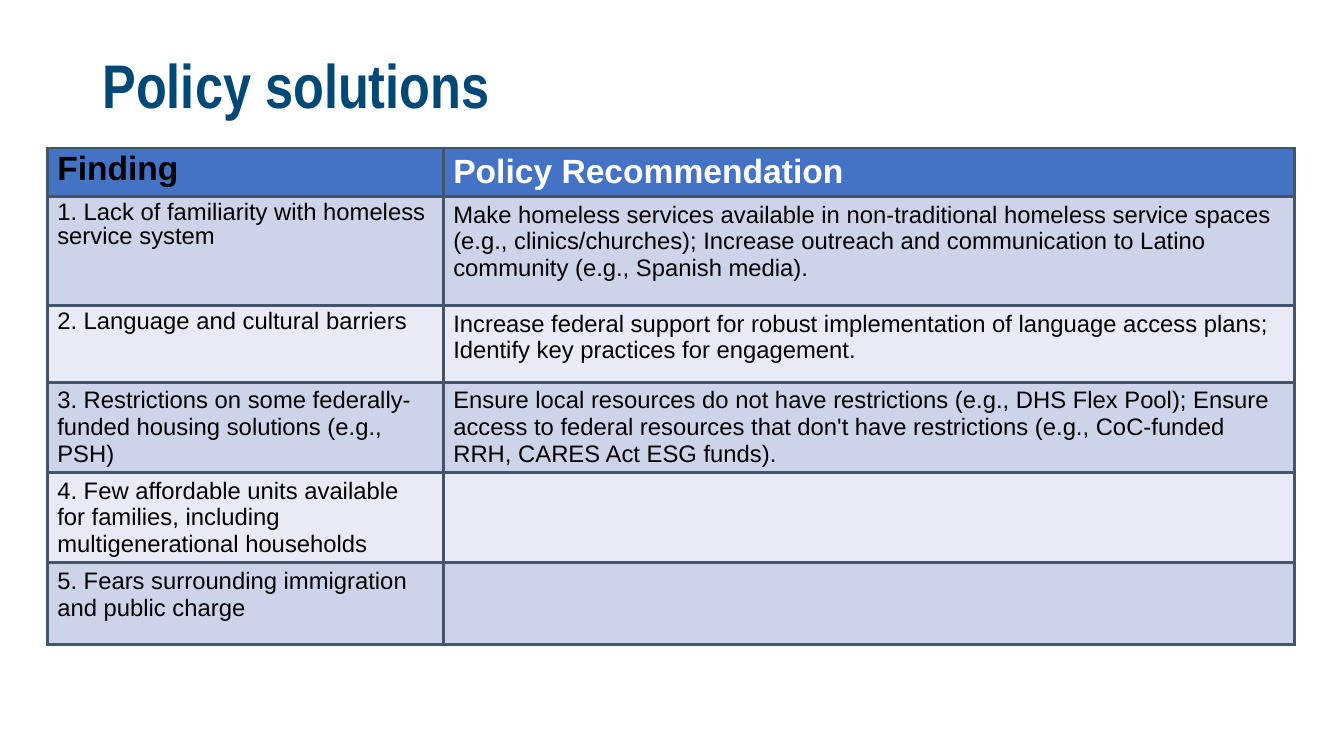
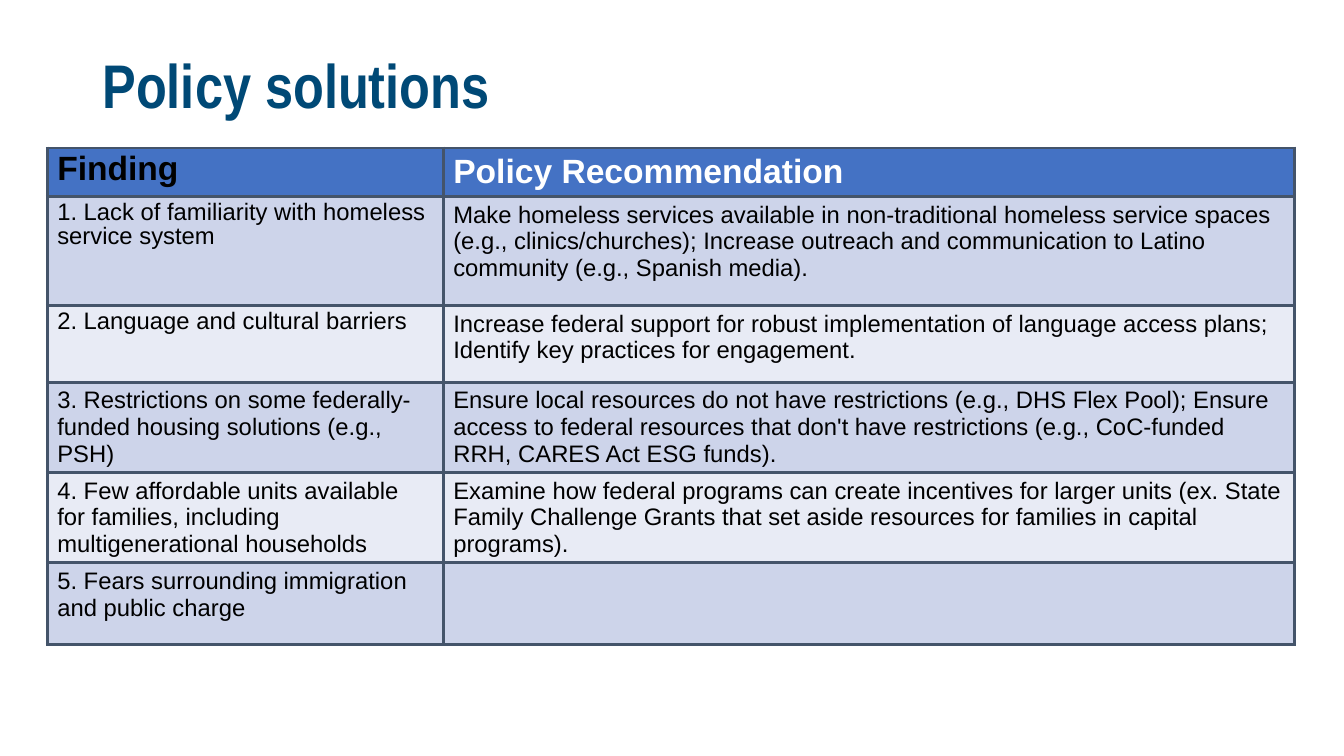
from lxml.etree import SubElement
from pptx import Presentation
from pptx.dml.color import RGBColor
from pptx.enum.text import MSO_ANCHOR, MSO_AUTO_SIZE, PP_ALIGN
from pptx.oxml.ns import qn
from pptx.util import Cm, Pt

# Content
TITLE = "Policy solutions"
HEADERS = ("Finding", "Policy Recommendation")
FINDINGS = [
    "1. Lack of familiarity with homeless service system",
    "2. Language and cultural barriers",
    "3. Restrictions on some federally-funded housing solutions (e.g., PSH)",
    "4. Few affordable units available for families, including multigenerational households",
    "5. Fears surrounding immigration and public charge",
]
RECOMMENDATIONS = [
    "Make homeless services available in non-traditional homeless service spaces "
    "(e.g., clinics/churches); Increase outreach and communication to Latino "
    "community (e.g., Spanish media).",
    "Increase federal support for robust implementation of language access "
    "plans; Identify key practices for engagement.",
    "Ensure local resources do not have restrictions (e.g., DHS Flex Pool); Ensure "
    "access to federal resources that don't have restrictions (e.g., CoC-funded "
    "RRH, CARES Act ESG funds).",
    "Examine how federal programs can create incentives for larger units (ex. State "
    "Family Challenge Grants that set aside resources for families in capital "
    "programs).",
]
RECOMMENDATIONS_SHOWN = (3, 4)  # one slide for each count

# Shared look
TITLE_COLOR, BLACK, WHITE = "004976", "000000", "FFFFFF"
HEADER_FILL, BAND_FILLS = "4472C4", ("CDD4EA", "E8EBF5")
BORDER_COLOR, BORDER_WIDTH = "44546A", Pt(2.25)
TITLE_FONT, TABLE_FONT = "Arial Narrow", "Arial"
TABLE_LEFT, TABLE_TOP = 1.19, 3.73
COLUMN_WIDTHS = (9.98, 21.46)
ROW_HEIGHTS = (1.22, 2.75, 1.93, 2.27, 2.27, 2.07)
TIGHT_ROWS = 3  # rows whose finding has tight line spacing


def rgb(color):
    return RGBColor.from_string(color)


def add_run(paragraph, text, font, size, color, bold=False):
    run = paragraph.add_run()
    run.text = text
    run.font.name = font
    run.font.size = Pt(size)
    run.font.bold = bold
    run.font.color.rgb = rgb(color)


def add_borders(cell):
    properties = cell._tc.get_or_add_tcPr()
    for side in ("L", "R", "T", "B"):
        line = SubElement(properties, qn(f"a:ln{side}"), w=str(BORDER_WIDTH))
        fill = SubElement(line, qn("a:solidFill"))
        SubElement(fill, qn("a:srgbClr"), val=BORDER_COLOR)


def add_title(slide):
    title = slide.shapes.title
    title.left, title.top = Cm(2.33), Cm(0.38)
    title.width, title.height = Cm(29.21), Cm(3.68)
    frame = title.text_frame
    frame.auto_size = MSO_AUTO_SIZE.NONE
    frame.vertical_anchor = MSO_ANCHOR.MIDDLE
    paragraph = frame.paragraphs[0]
    paragraph.alignment = PP_ALIGN.LEFT
    paragraph.line_spacing = 0.9
    add_run(paragraph, TITLE, TITLE_FONT, 44, TITLE_COLOR, bold=True)


def add_findings_table(slide, shown):
    blanks = [""] * (len(FINDINGS) - shown)
    rows = [HEADERS, *zip(FINDINGS, RECOMMENDATIONS[:shown] + blanks)]
    table = slide.shapes.add_table(
        len(rows), len(HEADERS), Cm(TABLE_LEFT), Cm(TABLE_TOP),
        Cm(sum(COLUMN_WIDTHS)), Cm(sum(ROW_HEIGHTS))).table
    for column, width in zip(table.columns, COLUMN_WIDTHS):
        column.width = Cm(width)

    for row_index, texts in enumerate(rows):
        table.rows[row_index].height = Cm(ROW_HEIGHTS[row_index])
        is_header = row_index == 0
        for column_index, text in enumerate(texts):
            cell = table.cell(row_index, column_index)
            add_borders(cell)
            cell.fill.solid()
            cell.fill.fore_color.rgb = rgb(
                HEADER_FILL if is_header else BAND_FILLS[(row_index - 1) % 2])
            if not text:
                continue
            paragraph = cell.text_frame.paragraphs[0]
            tight = column_index == 0 and row_index < TIGHT_ROWS
            paragraph.line_spacing = 0.9 if tight else 1.0
            color = WHITE if is_header and column_index else BLACK
            add_run(paragraph, text, TABLE_FONT, 24 if is_header else 17, color, is_header)


def main():
    presentation = Presentation()
    presentation.slide_width, presentation.slide_height = Cm(33.87), Cm(19.05)
    title_only = presentation.slide_layouts[5]
    for shown in RECOMMENDATIONS_SHOWN:
        slide = presentation.slides.add_slide(title_only)
        add_title(slide)
        add_findings_table(slide, shown)
    presentation.save("out.pptx")


if __name__ == "__main__":
    main()
